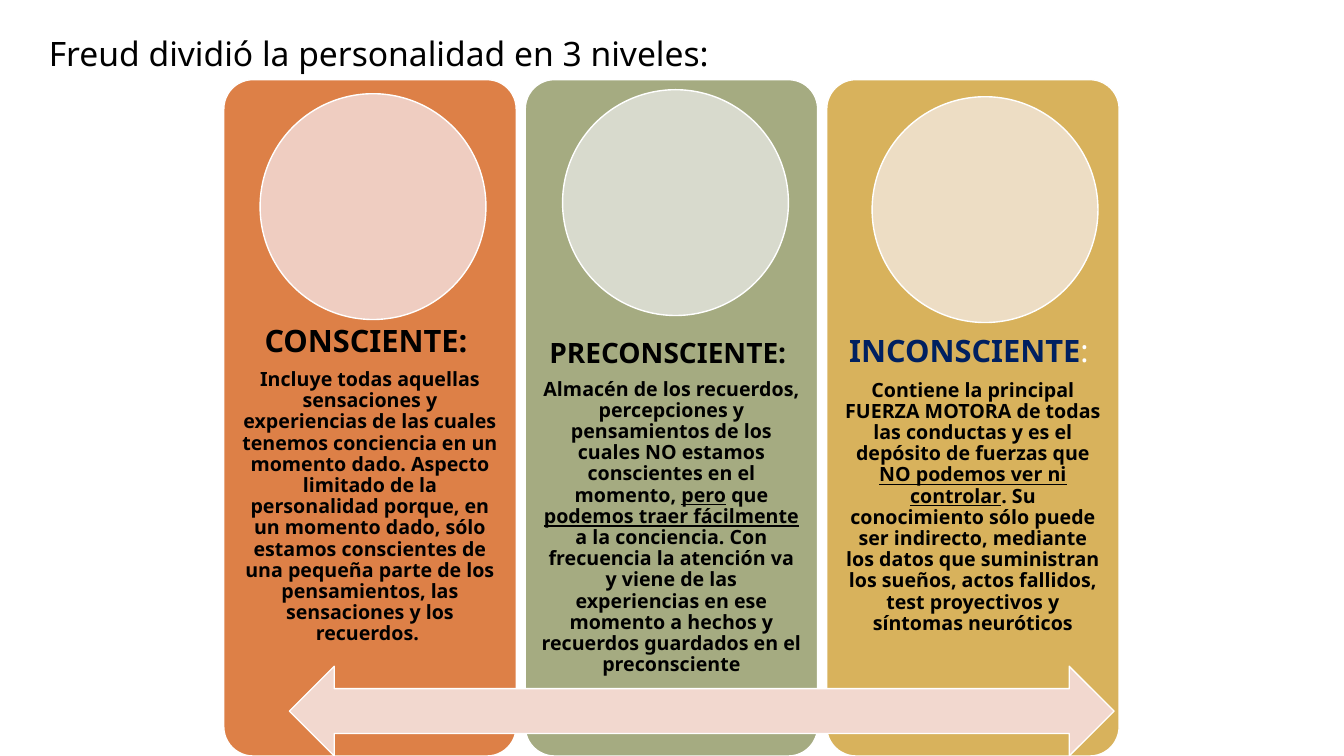
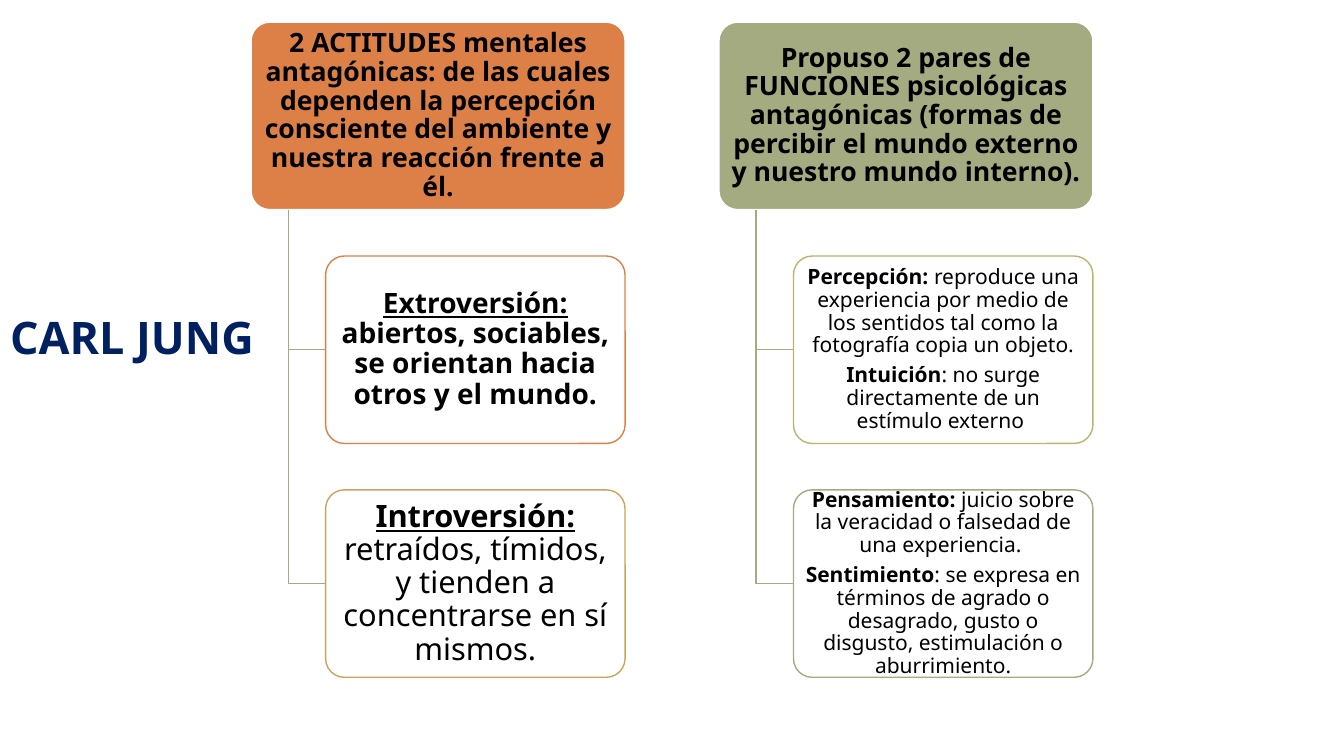
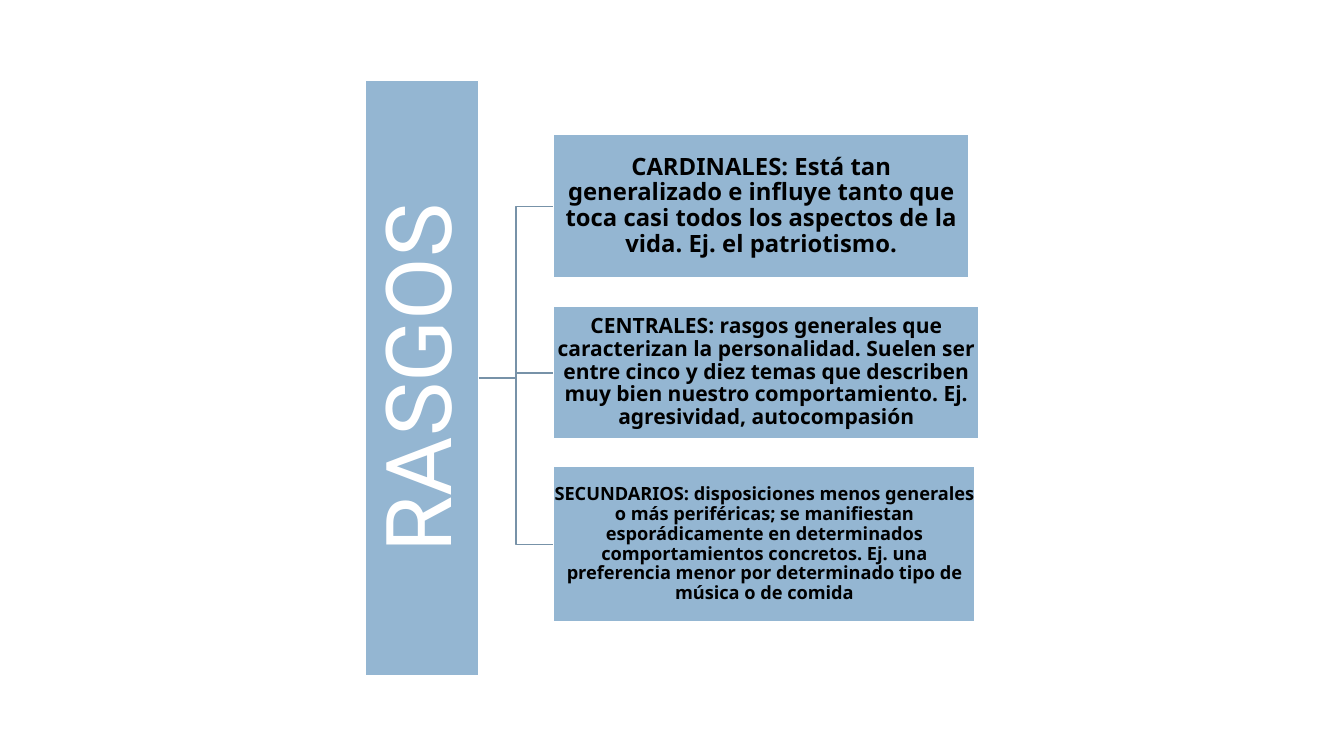
from pptx import Presentation
from pptx.dml.color import RGBColor
from pptx.enum.shapes import MSO_SHAPE as Shape
from pptx.enum.text import MSO_ANCHOR as Anchor, MSO_AUTO_SIZE as AutoSize, PP_ALIGN as Align
from pptx.util import Inches, Pt

COLORS = {
    "black": "000000", "white": "FFFFFF", "navy": "002060",
    "orange": "DD8047", "green": "A5AB81", "gold": "D8B25C",
    "ochre": "CCA35B", "olive": "BBB36E", "blue": "94B6D2", "slate": "7792A8",
    "pale orange": "EFCDC1", "pale green": "D8DACD", "pale gold": "EDDDC4",
    "pink": "F2D8CF",
}
FONT = "Noto Sans"
TITLE_ONLY = 5

# Each paragraph is (size, [(text, style, colour)]); style holds b (bold) and u (underline).
LEVELS = [
    ("orange", "pale orange", (2.58, 0.93), 3.47, 0.17, [
        (22, [("CONSCIENTE: ", "b")]),
        (14, [("Incluye todas aquellas sensaciones y experiencias de las cuales tenemos "
               "conciencia en un momento dado. Aspecto limitado de la personalidad porque, "
               "en un momento dado, sólo estamos conscientes de una pequeña parte de los "
               "pensamientos, las sensaciones y los recuerdos. ", "b")]),
    ]),
    ("green", "pale green", (5.58, 0.89), 3.69, 0.16, [
        (20, [("PRECONSCIENTE: ", "b")]),
        (14, [("Almacén de los recuerdos, percepciones y pensamientos de los cuales NO "
               "estamos conscientes en el momento, ", "b"),
              ("pero", "bu"), (" que ", "b"), ("podemos traer fácilmente ", "bu"),
              ("a la conciencia. Con frecuencia la atención va y viene de las experiencias "
               "en ese momento a hechos y recuerdos guardados en el preconsciente", "b")]),
    ]),
    ("gold", "pale gold", (8.65, 0.96), 3.47, 0.17, [
        (22, [("INCONSCIENTE", "b", "navy"), (": ", "", "white")]),
        (14, [("Contiene la principal FUERZA MOTORA de todas las conductas y es el depósito "
               "de fuerzas que ", "b"),
              ("NO podemos ver ni controlar", "bu"),
              (". Su conocimiento sólo puede ser indirecto, mediante los datos que "
               "suministran los sueños, actos fallidos, test proyectivos y síntomas "
               "neuróticos", "b")]),
    ]),
]

JUNG_BRANCHES = [
    ("orange",
     [(19, [("2 ACTITUDES mentales antagónicas: de las cuales dependen la percepción "
             "consciente del ambiente y nuestra reacción frente a él.", "b")])],
     [("orange", [(20, [("Extroversión: ", "bu"),
                        ("abiertos, sociables, se orientan hacia otros y el mundo.", "b")])]),
      ("ochre", [(22, [("Introversión: ", "bu"),
                       ("retraídos, tímidos, y tienden a concentrarse en sí mismos.", "")])])]),
    ("green",
     [(19, [("Propuso 2 pares de FUNCIONES psicológicas antagónicas (formas de percibir el "
             "mundo externo y nuestro mundo interno). ", "b")])],
     [("olive", [(15, [("Percepción: ", "b"),
                       ("reproduce una experiencia por medio de los sentidos tal como la "
                        "fotografía copia un objeto.", "")]),
                 (15, [("Intuición", "b"),
                       (": no surge directamente de un estímulo externo ", "")])]),
      ("green", [(15, [("Pensamiento:", "b"),
                       (" juicio sobre la veracidad o falsedad de una experiencia. ", "")]),
                 (15, [("Sentimiento", "b"),
                       (": se expresa en términos de agrado o desagrado, gusto o disgusto, "
                        "estimulación o aburrimiento.", "")])])]),
]

TRAITS = [
    ((1.33, 4.12, 1.43), 2.05, 17,
     "CARDINALES: Está tan generalizado e influye tanto que toca casi todos los aspectos de "
     "la vida. Ej. el patriotismo."),
    ((3.04, 4.22, 1.31), 3.7, 15,
     "CENTRALES: rasgos generales que caracterizan la personalidad. Suelen ser entre cinco y "
     "diez temas que describen muy bien nuestro comportamiento. Ej. agresividad, "
     "autocompasión"),
    ((4.63, 4.18, 1.54), 5.4, 13,
     "SECUNDARIOS: disposiciones menos generales o más periféricas; se manifiestan "
     "esporádicamente en determinados comportamientos concretos. Ej. una preferencia menor "
     "por determinado tipo de música o de comida"),
]


def rgb(name):
    return RGBColor.from_string(COLORS[name])


def style_font(font, size, color="black", bold=False, underline=False, name=FONT):
    font.name, font.size = name, Pt(size)
    font.bold, font.underline = bold, underline
    font.color.rgb = rgb(color)


def set_frame(frame, side, top):
    """Wrap and centre the text vertically, with the given insets in inches."""
    frame.word_wrap = True
    frame.auto_size = AutoSize.NONE
    frame.vertical_anchor = Anchor.MIDDLE
    frame.margin_left = frame.margin_right = Inches(side)
    frame.margin_top = frame.margin_bottom = Inches(top)


def write(frame, paragraphs, side, top):
    """Fill a frame with centred paragraphs made of styled runs."""
    set_frame(frame, side, top)
    for index, (size, segments) in enumerate(paragraphs):
        paragraph = frame.add_paragraph() if index else frame.paragraphs[0]
        paragraph.alignment = Align.CENTER
        paragraph.line_spacing = 0.9
        paragraph.space_after = Pt(round(size * 0.35, 1))
        for text, style, *color in segments:
            run = paragraph.add_run()
            run.text = text
            style_font(run.font, size, *color, bold="b" in style, underline="u" in style)


def paint(shape, fill, line="white"):
    shape.fill.solid()
    shape.fill.fore_color.rgb = rgb(fill)
    shape.line.color.rgb = rgb(line)
    shape.line.width = Pt(1)


def add_block(slide, kind, box, fill, line="white"):
    block = slide.shapes.add_shape(kind, *map(Inches, box))
    block.shadow.inherit = False
    paint(block, fill, line)
    if kind == Shape.ROUNDED_RECTANGLE:
        block.adjustments[0] = 0.1
    return block


def add_branch_line(slide, points, color):
    """Draw an open angular line through points given in inches."""
    start, *rest = [(Inches(x), Inches(y)) for x, y in points]
    outline = slide.shapes.build_freeform(*start)
    outline.add_line_segments(rest, close=False)
    branch = outline.convert_to_shape()
    branch.shadow.inherit = False
    branch.fill.background()
    branch.line.color.rgb = rgb(color)
    branch.line.width = Pt(1)


def add_titled_slide(deck, text, box, size, align, **font_style):
    slide = deck.slides.add_slide(deck.slide_layouts[TITLE_ONLY])
    title = slide.shapes.title
    title.left, title.top, title.width, title.height = map(Inches, box)
    frame = title.text_frame
    frame.text = text
    set_frame(frame, 0.1, 0.05)
    paragraph = frame.paragraphs[0]
    paragraph.alignment = align
    style_font(paragraph.runs[0].font, size, **font_style)
    return slide


def add_freud_slide(deck):
    slide = add_titled_slide(deck, "Freud dividió la personalidad en 3 niveles: ",
                             (0.19, 0.28, 7.22, 0.5), 24, Align.CENTER)
    width, pitch, circle = 2.9, 2.99, 2.24
    for index, (fill, pale, circle_at, text_top, inset, paragraphs) in enumerate(LEVELS):
        left = 2.22 + index * pitch
        add_block(slide, Shape.ROUNDED_RECTANGLE, (left, 0.79, width, 6.71), fill)
        caption = slide.shapes.add_textbox(*map(Inches, (left, text_top, width, 2.69)))
        write(caption.text_frame, paragraphs, inset, inset)
        add_block(slide, Shape.OVAL, (*circle_at, circle, circle), pale)
    add_block(slide, Shape.LEFT_RIGHT_ARROW, (2.87, 6.61, 8.18, 0.89), "pink")


def add_jung_slide(deck):
    slide = add_titled_slide(deck, "CARL JUNG", (0, 3.02, 2.84, 0.64), 32, Align.LEFT,
                             color="navy", bold=True)
    top, height, pitch, indent = 0.22, 1.86, 2.32, 0.37
    for column, (fill, heading, children) in enumerate(JUNG_BRANCHES):
        left = 2.49 + column * 4.64
        parent = add_block(slide, Shape.ROUNDED_RECTANGLE, (left, top, 3.71, height), fill)
        write(parent.text_frame, heading, 0.04, 0.03)
        trunk, child_left = left + indent, left + 2 * indent
        for row, (line, paragraphs) in enumerate(children, start=1):
            child_top = top + row * pitch
            middle = child_top + height / 2
            add_branch_line(slide, [(trunk, top + height), (trunk, middle),
                                    (child_left, middle)], "green")
            child = add_block(slide, Shape.ROUNDED_RECTANGLE,
                              (child_left, child_top, 2.97, height), "white", line)
            write(child.text_frame, paragraphs, 0.04, 0.02)


def add_traits_slide(deck):
    slide = add_titled_slide(deck, "RASGOS", (1.23, 3.19, 5.91, 1.12), 65, Align.CENTER,
                             color="white", name="Roboto")
    bar = slide.shapes.title
    bar.rotation = 270
    paint(bar, "blue")
    set_frame(bar.text_frame, 0.05, 0.05)
    bar.text_frame.paragraphs[0].line_spacing = 0.9
    start, bend, end, middle = 4.75, 5.12, 5.49, 3.75
    for (top, width, height), target, size, text in TRAITS:
        add_branch_line(slide, [(start, middle), (bend, middle), (bend, target),
                                (end, target)], "slate")
        trait = add_block(slide, Shape.RECTANGLE, (end, top, width, height), "blue")
        write(trait.text_frame, [(size, [(text, "b")])], 0.01, 0.01)


def main():
    deck = Presentation()
    deck.slide_width, deck.slide_height = Inches(13.33), Inches(7.5)
    add_freud_slide(deck)
    add_jung_slide(deck)
    add_traits_slide(deck)
    deck.save("out.pptx")


if __name__ == "__main__":
    main()
